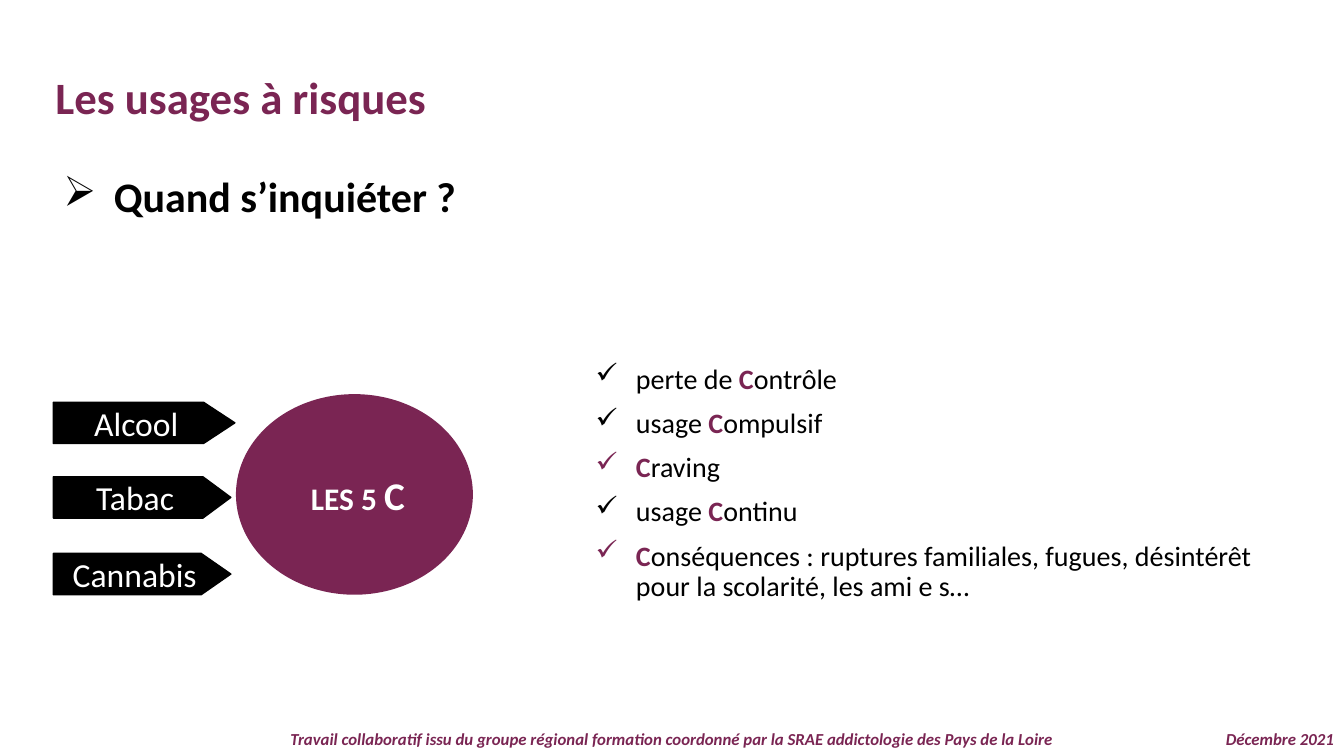
from lxml.etree import SubElement
from pptx import Presentation
from pptx.dml.color import RGBColor
from pptx.enum.shapes import MSO_SHAPE as Shape
from pptx.enum.text import MSO_ANCHOR as Anchor, PP_ALIGN as Align
from pptx.oxml.ns import qn
from pptx.util import Inches, Pt

FONT = "Calibri"
COLORS = {"plum": "7A2553", "black": "000000", "white": "FFFFFF"}
SIGNS = [
    [("perte de ", False), ("C", True), ("ontrôle", False)],
    [("usage ", False), ("C", True), ("ompulsif", False)],
    [("C", True), ("raving", False)],
    [("usage ", False), ("C", True), ("ontinu", False)],
    [("C", True), ("onséquences : ruptures familiales, fugues, désintérêt "
                   "pour la scolarité, les ami e s…", False)],
]
# label, top, width, point adjustment
PRODUCTS = [
    ("Alcool", 3.99, 1.8, 0.76),
    ("Tabac", 4.73, 1.76, 0.675),
    ("Cannabis", 5.49, 1.76, 0.718),
]


def color(name):
    return RGBColor.from_string(COLORS[name])


def style(font, size, name, bold=False, italic=False):
    font.name, font.size, font.bold, font.italic = FONT, Pt(size), bold, italic
    font.color.rgb = color(name)


def add_bullet(para, char, indent):
    """Give a paragraph a bullet sign and a hanging indent in inches."""
    properties = para._p.get_or_add_pPr()
    properties.set("marL", str(Inches(indent)))
    properties.set("indent", str(-Inches(indent)))
    SubElement(properties, qn("a:buChar")).set("char", char)


def add_text_box(page, left, top, width, height):
    box = page.shapes.add_textbox(Inches(left), Inches(top), Inches(width), Inches(height))
    box.text_frame.word_wrap = True
    para = box.text_frame.paragraphs[0]
    para.line_spacing = 0.9
    return box.text_frame, para


def add_label_shape(page, kind, left, top, width, height, fill):
    """Add a filled shape with one centred paragraph."""
    shape = page.shapes.add_shape(kind, Inches(left), Inches(top), Inches(width), Inches(height))
    shape.shadow.inherit = False
    shape.fill.solid()
    shape.fill.fore_color.rgb = color(fill)
    shape.text_frame.vertical_anchor = Anchor.MIDDLE
    para = shape.text_frame.paragraphs[0]
    para.alignment = Align.CENTER
    return shape, para


def add_title(page, left, top, width, height):
    title = page.shapes.title
    title.left, title.top = Inches(left), Inches(top)
    title.width, title.height = Inches(width), Inches(height)
    title.text_frame.vertical_anchor = Anchor.TOP
    title.text_frame.text = "Les usages à risques"
    para = title.text_frame.paragraphs[0]
    para.alignment = Align.LEFT
    style(para.font, 32, "plum", bold=True)


def add_question(page, left, top, width, height):
    para = add_text_box(page, left, top, width, height)[1]
    add_bullet(para, "➢", 0.5)
    para.add_run().text = "Quand s’inquiéter ?"
    style(para.font, 30, "black", bold=True)


def add_signs(page, left, top, width, height):
    frame, para = add_text_box(page, left, top, width, height)
    for index, parts in enumerate(SIGNS):
        if index:
            para = frame.add_paragraph()
            para.line_spacing = 0.9
            para.space_before = Pt(10)
        add_bullet(para, "✓", 0.4)
        for text, initial in parts:
            run = para.add_run()
            run.text = text
            style(run.font, 20, "plum" if initial else "black", bold=initial)


def add_five_c(page, left, top, width, height):
    ellipse, para = add_label_shape(page, Shape.OVAL, left, top, width, height, "plum")
    ellipse.line.fill.background()
    ellipse.text_frame.word_wrap = False
    run = para.add_run()
    run.text = " les 5 C"
    style(run.font, 28, "white", bold=True)
    run._r.get_or_add_rPr().set("cap", "small")


def add_products(page, left, height):
    for label, top, width, point in PRODUCTS:
        arrow, para = add_label_shape(page, Shape.PENTAGON, left, top, width, height, "black")
        arrow.adjustments[0] = point
        arrow.line.color.rgb = color("black")
        arrow.line.width = Pt(1)
        para.add_run().text = label
        style(para.font, 24, "white")


def add_footer(page, left, top, width, height):
    credit = ("Travail collaboratif issu du groupe régional formation coordonné "
              "par la SRAE addictologie des Pays de la Loire")
    date_width = 1.45
    for text, start, span, align in [
        (credit, left, width, Align.CENTER),
        ("Décembre 2021", left + width - date_width, date_width, Align.RIGHT),
    ]:
        para = add_text_box(page, start, top, span, height)[1]
        para.alignment = align
        para.add_run().text = text
        style(para.font, 12, "plum", bold=True, italic=True)


def main():
    deck = Presentation()
    deck.slide_width, deck.slide_height = Inches(13.33), Inches(7.5)
    page = deck.slides.add_slide(deck.slide_layouts.get_by_name("Title Only"))
    add_footer(page, 0, 7.2, 13.33, 0.3)
    add_title(page, 0.45, 0.64, 12.97, 0.64)
    add_question(page, 0.53, 1.7, 11.59, 0.77)
    add_signs(page, 5.81, 3.57, 6.97, 3.15)
    add_five_c(page, 2.34, 3.91, 2.35, 1.99)
    add_products(page, 0.53, 0.41)
    deck.save("out.pptx")


if __name__ == "__main__":
    main()
